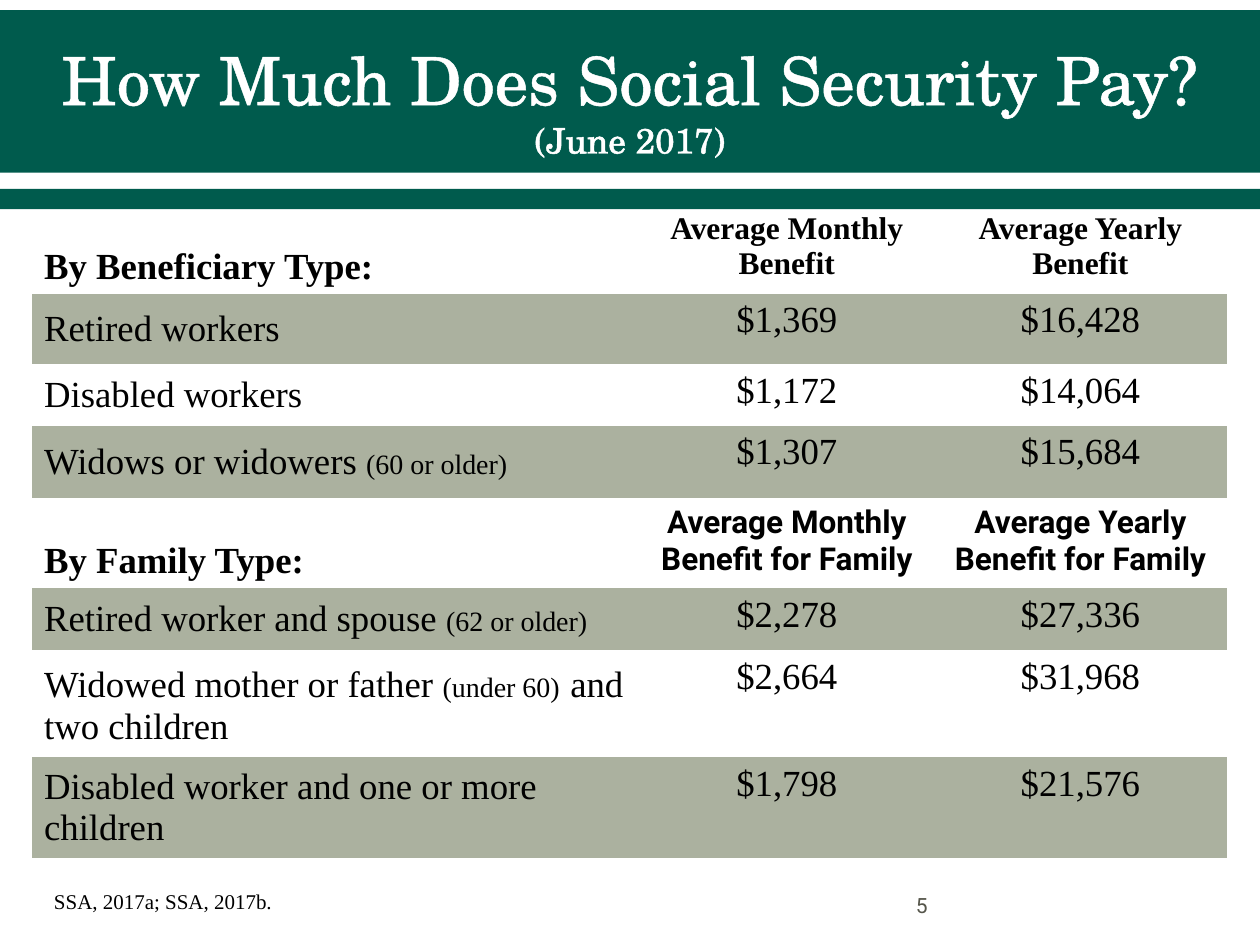
from lxml.etree import SubElement
from pptx import Presentation
from pptx.dml.color import RGBColor
from pptx.enum.shapes import MSO_SHAPE as Shape
from pptx.enum.text import MSO_ANCHOR as Anchor, PP_ALIGN as Align
from pptx.oxml import parse_xml
from pptx.oxml.ns import nsdecls, qn
from pptx.util import Inches, Pt

SERIF = "Times New Roman"
SANS = "Roboto"
GREEN = "005B4D"
SAGE = "ABB19F"


def color(value):
    return RGBColor.from_string(value)


def write(frame, runs, font, ink="000000", bold=False, align=Align.LEFT):
    frame.word_wrap = True
    paragraph = frame.paragraphs[0]
    paragraph.alignment = align
    paragraph.font.name = font
    paragraph.font.bold = bold
    paragraph.font.color.rgb = color(ink)
    if len(runs) == 1:
        paragraph.font.size = Pt(runs[0][1])
    for words, size in runs:
        run = paragraph.add_run()
        run.text = words
        if len(runs) > 1:
            run.font.size = Pt(size)
    return paragraph


deck = Presentation()
deck.slide_width = Inches(10)
deck.slide_height = Inches(7.5)
slide = deck.slides.add_slide(deck.slide_layouts[6])

for top, height in [(0.08, 1.29), (1.5, 0.16)]:
    band = slide.shapes.add_shape(
        Shape.RECTANGLE, 0, Inches(top), Inches(10), Inches(height))
    band.shadow.inherit = False
    band.fill.solid()
    band.fill.fore_color.rgb = color(GREEN)
    band.line.fill.background()

title = slide.shapes.add_textbox(0, Inches(0.25), Inches(10), Inches(1.08)).text_frame
title.vertical_anchor = Anchor.MIDDLE
heading = write(title, [("How Much Does Social Security Pay?", 38), ("(June 2017)", 20)],
                "TeX Gyre Schola", "FFFFFF", align=Align.CENTER)
heading.add_line_break()
question, date = heading.runs
line_break = heading._p.find(qn("a:br"))
date._r.addprevious(line_break)
SubElement(line_break, qn("a:rPr"), sz="3800")
for run in (question, date):
    run.font._element.insert(0, parse_xml(
        f'<a:ln {nsdecls("a")} w="{Pt(1.1)}"><a:solidFill>'
        '<a:srgbClr val="FFFFFF"/></a:solidFill></a:ln>'))

page = slide.shapes.add_textbox(Inches(7.17), Inches(7), Inches(1.92), Inches(0.36)).text_frame
page.vertical_anchor = Anchor.MIDDLE
write(page, [("5", 12)], SANS, "55554A")

citation = slide.shapes.add_textbox(Inches(0.33), Inches(7), Inches(5.75), Inches(0.3)).text_frame
write(citation, [("SSA, 2017a; SSA, 2017b.", 12)], SERIF)

benefits = [
    (0.75, [("By Beneficiary Type:", 21)], "Average Monthly Benefit", "Average Yearly Benefit"),
    (0.56, [("Retired workers", 21)], "$1,369", "$16,428"),
    (0.49, [("Disabled workers", 21)], "$1,172", "$14,064"),
    (0.57, [("Widows or widowers ", 21), ("(60 or older)", 16)], "$1,307", "$15,684"),
    (0.72, [("By Family Type:", 21)],
     "Average Monthly Benefit for Family", "Average Yearly Benefit for Family"),
    (0.49, [("Retired worker and spouse ", 21), ("(62 or older)", 16)], "$2,278", "$27,336"),
    (0.85, [("Widowed mother or father ", 21), ("(under 60)", 16), (" ", 24),
            ("and two children", 21)], "$2,664", "$31,968"),
    (0.79, [("Disabled worker and one or more children", 21)], "$1,798", "$21,576"),
]
header_fonts = {0: SERIF, 4: SANS}

table = slide.shapes.add_table(
    len(benefits), 3, Inches(0.25), Inches(1.58), Inches(9.5),
    Inches(sum(benefit[0] for benefit in benefits))).table
table.first_row = False
table.horz_banding = False
table._tbl.tblPr.find(qn("a:tableStyleId")).text = "{2D5ABB26-0587-4C30-8999-92F81FD0307C}"
for column, width in zip(table.columns, [4.83, 2.33, 2.33]):
    column.width = Inches(width)

for row, (height, label, monthly, yearly) in enumerate(benefits):
    table.rows[row].height = Inches(height)
    is_header = row in header_fonts
    amount_size = 18 if is_header else 21
    contents = [label, [(monthly, amount_size)], [(yearly, amount_size)]]
    for col, runs in enumerate(contents):
        cell = table.cell(row, col)
        if row % 2:
            cell.fill.solid()
            cell.fill.fore_color.rgb = color(SAGE)
        else:
            cell.fill.background()
        if col == 0:
            cell.vertical_anchor = Anchor.BOTTOM if is_header else Anchor.MIDDLE
        else:
            cell.vertical_anchor = Anchor.MIDDLE if row == 0 else Anchor.TOP
        write(cell.text_frame, runs, header_fonts.get(row, SERIF) if col else SERIF,
              bold=is_header, align=Align.CENTER if col else Align.LEFT)

deck.save("out.pptx")
